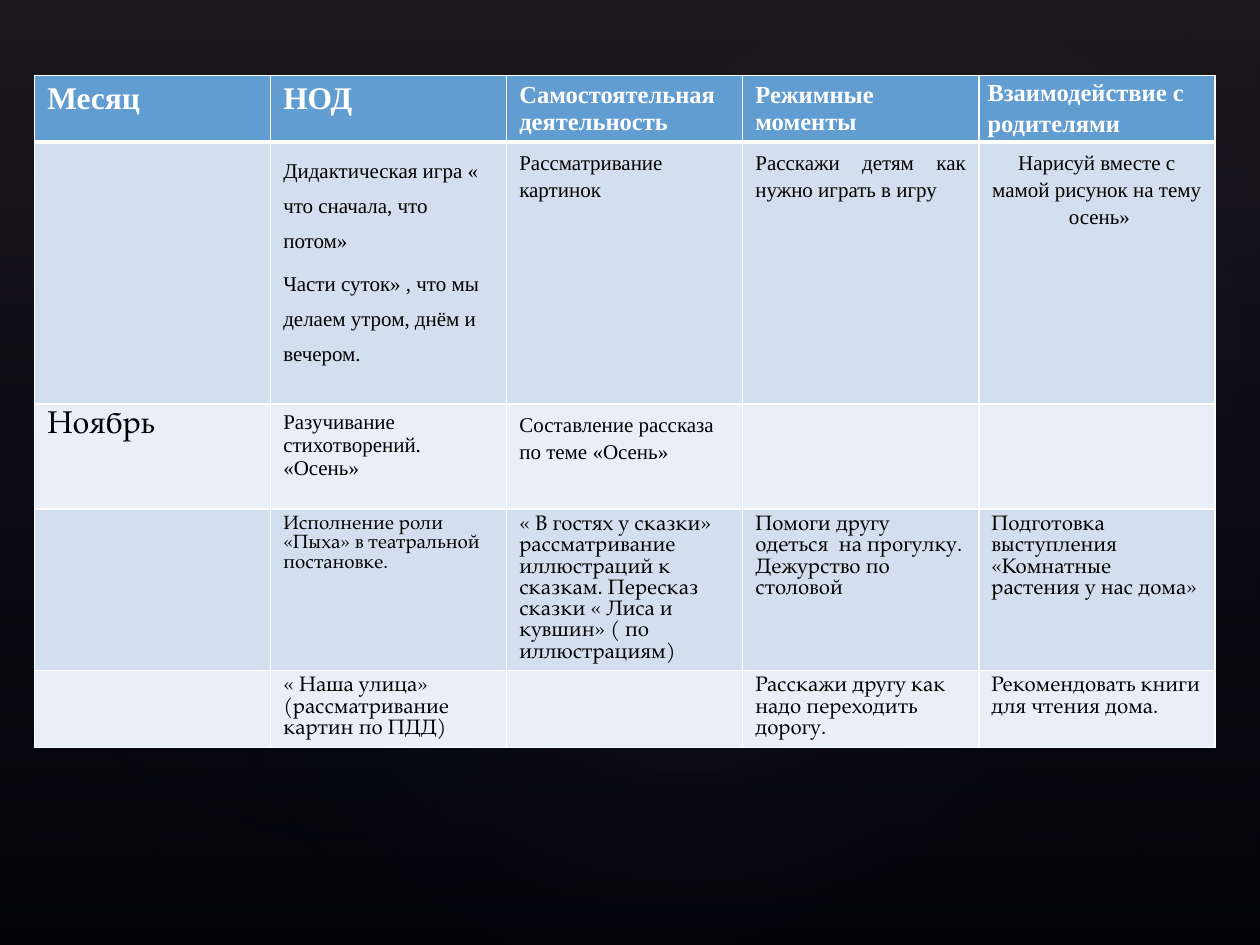
import dataclasses
import typing
import lxml.etree
import pptx
import pptx.dml.color
import pptx.enum.shapes
import pptx.enum.text
import pptx.oxml.ns
import pptx.util

Pt = pptx.util.Pt
Align = pptx.enum.text.PP_ALIGN
Kind = pptx.enum.shapes.MSO_SHAPE
NS = pptx.oxml.ns.nsdecls("a")
SERIF = "Times New Roman"
BOOK = "TeX Gyre Pagella"


@dataclasses.dataclass
class Stop:
    pos: int
    hue: str
    alpha: int


@dataclasses.dataclass
class Glow:
    box: tuple[float, float, float, float]
    turn: float
    alpha: int


@dataclasses.dataclass
class Entry:
    lines: list[str]
    form: dict[str, typing.Any] = dataclasses.field(default_factory=dict)
    inset: typing.Optional[tuple[float, float]] = None


def color(code: str) -> pptx.dml.color.RGBColor:
    return pptx.dml.color.RGBColor.from_string(code)


def write(frame, lines: list[str], font: str = SERIF, size: float = 12,
          hue: str = "000000", bold: bool = False, align=Align.LEFT,
          lead: float = 1, before: float = 0, after: float = 0) -> None:
    for i, line in enumerate(lines):
        para = frame.paragraphs[0] if i == 0 else frame.add_paragraph()
        para.alignment = align
        para.line_spacing = lead
        para.space_before = Pt(before)
        para.space_after = Pt(after)
        run = para.add_run()
        run.text = line
        run.font.name = font
        run.font.size = Pt(size)
        run.font.bold = bold
        run.font.color.rgb = color(hue)


def blend(shape, stops: list[Stop], mode: str) -> None:
    marks = "".join(
        f'<a:gs pos="{s.pos * 1000}"><a:srgbClr val="{s.hue}">'
        f'<a:alpha val="{s.alpha * 1000}"/></a:srgbClr></a:gs>' for s in stops)
    grad = lxml.etree.fromstring(
        f'<a:gradFill {NS} rotWithShape="1"><a:gsLst>{marks}</a:gsLst>{mode}</a:gradFill>')
    shape.shadow.inherit = False
    shape.line.fill.background()
    shape.fill.background()
    props = shape.fill._xPr
    props.replace(props.find(pptx.oxml.ns.qn("a:noFill")), grad)


def edge(cell, base: float) -> None:
    props = cell._tc.get_or_add_tcPr()
    for i, side in enumerate("LRTB"):
        width = Pt(base if side == "B" else 1)
        props.insert(i, lxml.etree.fromstring(
            f'<a:ln{side} {NS} w="{width}"><a:solidFill>'
            f'<a:srgbClr val="FFFFFF"/></a:solidFill></a:ln{side}>'))


def glow(shapes, item: Glow) -> None:
    oval = shapes.add_shape(Kind.OVAL, *map(Pt, item.box))
    oval.rotation = item.turn
    blend(oval, [Stop(0, "C4BCC6", item.alpha), Stop(58, "242852", 0)],
          '<a:path path="circle"><a:fillToRect l="50000" t="50000" r="50000" b="50000"/></a:path>')


def fill(cell, entry: typing.Optional[Entry], hue: str, base: float) -> None:
    cell.fill.solid()
    cell.fill.fore_color.rgb = color(hue)
    edge(cell, base)
    if entry:
        if entry.inset:
            cell.margin_left = cell.margin_right = Pt(entry.inset[0])
            cell.margin_top = cell.margin_bottom = Pt(entry.inset[1])
        write(cell.text_frame, entry.lines, **entry.form)


HEAD = dict(size=18, hue="FFFFFF", bold=True)
SUB = HEAD | dict(size=14)
OPEN = dict(lead=1.15, after=4)
PLAIN = dict(font=BOOK)

GLOWS = [
    Glow((108, 82, 570, 449), 328.7, 7),
    Glow((-21.6, 92, 436, 353), 294.3, 8),
    Glow((258, 9.4, 510, 374), 328.7, 8),
]
HUES = ["629DD1", "D3DFEE", "EAEFF7", "D3DFEE", "EAEFF7"]
TALL = [38.2, 149.7, 60, 92, 44]
WIDE = 134.9
ROWS = [
    [
        Entry(["Месяц"], HEAD),
        Entry(["НОД"], HEAD),
        Entry(["Самостоятельная деятельность"], SUB),
        Entry(["Режимные моменты"], SUB),
        Entry(["Взаимодействие с родителями"], SUB | OPEN, (5, 0)),
    ],
    [
        None,
        Entry(["Дидактическая игра « что сначала, что потом»",
               "Части суток» , что мы делаем утром, днём и вечером."],
              dict(lead=1.5, before=4.5)),
        Entry(["Рассматривание картинок"], OPEN),
        Entry(["Расскажи детям как нужно играть в игру"], OPEN | dict(align=Align.JUSTIFY)),
        Entry(["Нарисуй вместе с мамой рисунок на тему  осень»"],
              dict(align=Align.CENTER, lead=1.15, before=5, after=5)),
    ],
    [
        Entry(["Ноябрь"], PLAIN | dict(size=18)),
        Entry(["Разучивание стихотворений. «Осень»"]),
        Entry(["Составление рассказа по теме «Осень»"], OPEN),
        None,
        None,
    ],
    [
        None,
        Entry(["Исполнение роли «Пыха» в театральной постановке."], PLAIN | dict(size=11)),
        Entry(["« В гостях у сказки» рассматривание иллюстраций к сказкам. "
               "Пересказ сказки « Лиса и кувшин» ( по иллюстрациям)"], PLAIN),
        Entry(["Помоги другу одеться  на прогулку.", "Дежурство по столовой"], PLAIN),
        Entry(["Подготовка выступления «Комнатные растения у нас дома»"], PLAIN),
    ],
    [
        None,
        Entry(["« Наша улица» (рассматривание картин по ПДД)"], PLAIN),
        None,
        Entry(["Расскажи другу как надо переходить дорогу."], PLAIN),
        Entry(["Рекомендовать книги для чтения дома."], PLAIN),
    ],
]


def main() -> None:
    deck = pptx.Presentation()
    deck.slide_width, deck.slide_height = Pt(720), Pt(540)
    slide = deck.slides.add_slide(deck.slide_layouts[6])
    back = slide.background.fill
    back.solid()
    back.fore_color.rgb = color("000000")

    shade = slide.shapes.add_shape(Kind.RECTANGLE, 0, 0, Pt(720), Pt(540))
    blend(shade, [Stop(0, "504652", 36), Stop(100, "242852", 10)],
          '<a:lin ang="5400000" scaled="0"/>')
    for item in GLOWS:
        glow(slide.shapes, item)

    count = len(ROWS[0])
    table = slide.shapes.add_table(len(ROWS), count, Pt(19.8), Pt(43),
                                   Pt(WIDE * count), Pt(sum(TALL))).table
    for col in table.columns:
        col.width = Pt(WIDE)
    for r, (row, hue, tall) in enumerate(zip(ROWS, HUES, TALL)):
        table.rows[r].height = Pt(tall)
        for c, entry in enumerate(row):
            fill(table.cell(r, c), entry, hue, 3 if r == 0 else 1)
    deck.save("out.pptx")


if __name__ == "__main__":
    main()
